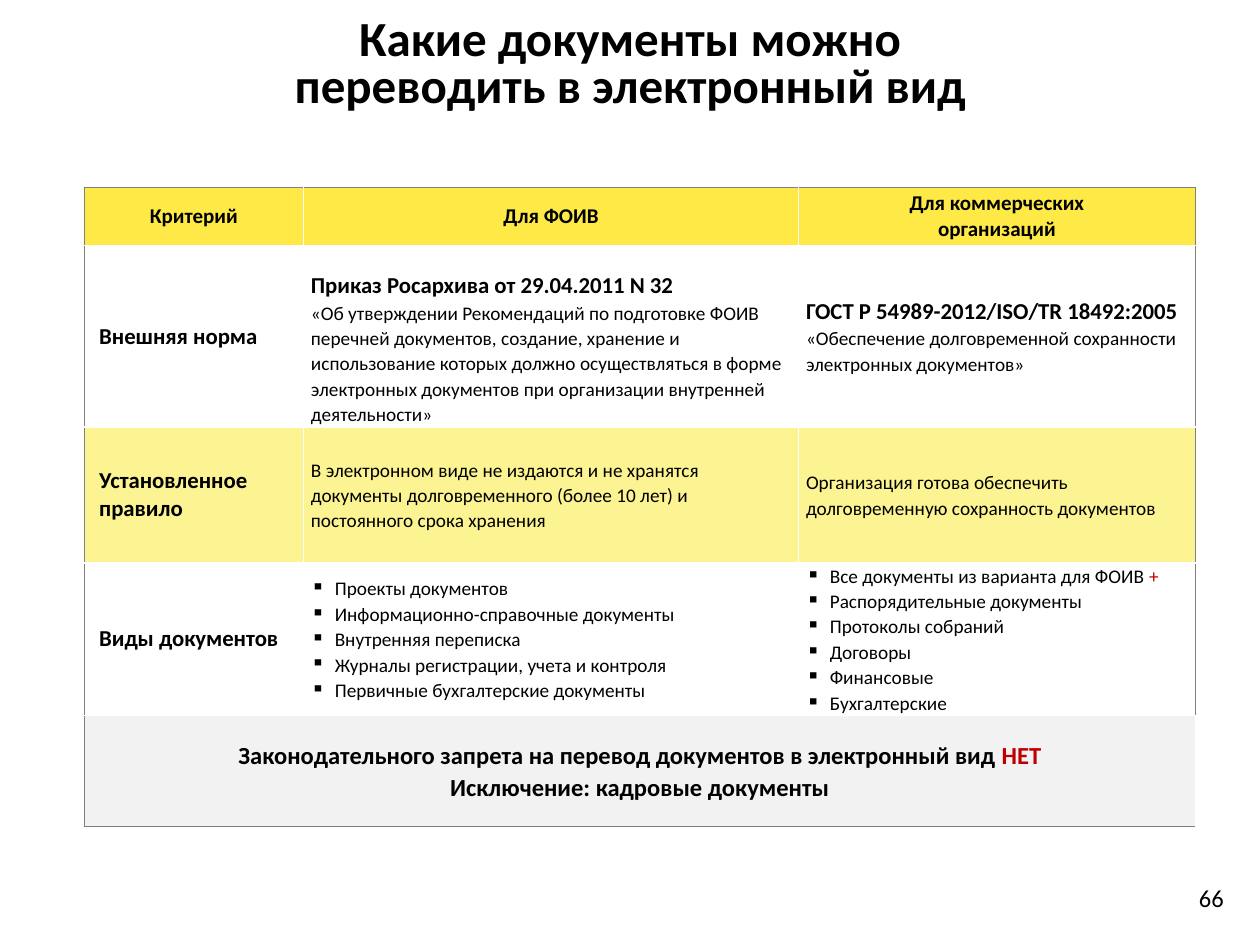
import pptx
import pptx.dml.color
import pptx.enum.text
import pptx.oxml
import pptx.oxml.ns
import pptx.util
from lxml import etree
from pptx.util import Cm

BLACK = pptx.dml.color.RGBColor(0x00, 0x00, 0x00)
WHITE = pptx.dml.color.RGBColor(0xFF, 0xFF, 0xFF)
RED = pptx.dml.color.RGBColor(0xC0, 0x00, 0x00)
GREY = pptx.dml.color.RGBColor(0x80, 0x80, 0x80)
LIGHT_GREY = pptx.dml.color.RGBColor(0xF2, 0xF2, 0xF2)
YELLOW = pptx.dml.color.RGBColor(0xFE, 0xE9, 0x47)
PALE_YELLOW = pptx.dml.color.RGBColor(0xFC, 0xF3, 0x92)

FONT = "Calibri"
LEFT = pptx.enum.text.PP_ALIGN.LEFT
CENTER = pptx.enum.text.PP_ALIGN.CENTER
RIGHT = pptx.enum.text.PP_ALIGN.RIGHT
MIDDLE = pptx.enum.text.MSO_ANCHOR.MIDDLE

COLUMN_WIDTHS = (4.42, 9.98, 8.0)
ROW_HEIGHTS = (1.17, 3.65, 2.74, 3.07, 2.24)
ROW_FILLS = (YELLOW, WHITE, PALE_YELLOW, WHITE, LIGHT_GREY)
HEADERS = ("Критерий", "Для ФОИВ", "Для коммерческих\vорганизаций")
LABELS = ("Внешняя норма", "Установленное правило", "Виды документов")
NORMS = (
    ("Приказ Росархива от 29.04.2011 N 32",
     "«Об утверждении Рекомендаций по подготовке ФОИВ перечней документов, создание, "
     "хранение и использование которых должно осуществляться в форме электронных "
     "документов при организации внутренней деятельности»"),
    ("ГОСТ Р 54989-2012/ISO/TR 18492:2005",
     "«Обеспечение долговременной сохранности электронных документов»"),
)
RULES = (
    "В электронном виде не издаются и не хранятся документы долговременного "
    "(более 10 лет) и постоянного срока хранения",
    "Организация готова обеспечить долговременную сохранность документов",
)
DOCUMENT_KINDS = (
    ("Проекты документов", "Информационно-справочные документы", "Внутренняя переписка",
     "Журналы регистрации, учета и контроля", "Первичные бухгалтерские документы"),
    ("Все документы из варианта для ФОИВ ", "Распорядительные документы",
     "Протоколы собраний", "Договоры", "Финансовые", "Бухгалтерские"),
)
CONCLUSIONS = ("Законодательного запрета на перевод документов в электронный вид ",
               "Исключение: кадровые документы")


def write(paragraph, text, size, bold=False, align=LEFT, spacing=None):
    """Fill a paragraph with text in one style."""
    paragraph.text = text
    paragraph.alignment = align
    paragraph.line_spacing = spacing
    font = paragraph.font
    font.name, font.size, font.bold = FONT, pptx.util.Pt(size), bold
    font.color.rgb = BLACK


def add_red(paragraph, text):
    """Append a red run to a paragraph."""
    run = paragraph.add_run()
    run.text = text
    run.font.color.rgb = RED


def next_paragraph(frame, index):
    """Return the first paragraph of a frame or add another one."""
    return frame.add_paragraph() if index else frame.paragraphs[0]


def indent(paragraph, left, hanging=0, bullet=None):
    """Set the left indent and an optional hanging bullet."""
    properties = paragraph._p.get_or_add_pPr()
    properties.set("marL", str(Cm(left)))
    properties.set("indent", str(-Cm(hanging)))
    if bullet:
        mark = etree.SubElement(properties, pptx.oxml.ns.qn("a:buChar"))
        mark.set("char", bullet)


def set_border(cell, side, color):
    """Draw a one-point border on one side of a cell."""
    cell._tc.get_or_add_tcPr().append(pptx.oxml.parse_xml(
        f'<a:{side} {pptx.oxml.ns.nsdecls("a")} w="12700"><a:solidFill>'
        f'<a:srgbClr val="{color}"/></a:solidFill></a:{side}>'))


def format_cell(table, row, column):
    """Set borders, fill, anchor and margins of a cell."""
    cell = table.cell(row, column)
    last_row, last_column = len(ROW_HEIGHTS) - 1, len(COLUMN_WIDTHS) - 1
    outer_sides = (("lnL", column == 0), ("lnR", column == last_column),
                   ("lnT", row == 0), ("lnB", row == last_row))
    for side, is_outer in outer_sides:
        set_border(cell, side, GREY if is_outer else WHITE)
    cell.fill.solid()
    cell.fill.fore_color.rgb = ROW_FILLS[row]
    cell.vertical_anchor = MIDDLE
    is_body = 0 < row < last_row and column > 0
    cell.margin_left = cell.margin_right = Cm(0.15 if is_body else 0.05)
    cell.margin_top = cell.margin_bottom = Cm(0 if is_body else 0.05)


def fill_body(table):
    """Write the norms, rules and document kinds of both columns."""
    for column, (norm, rule, kinds) in enumerate(zip(NORMS, RULES, DOCUMENT_KINDS), 1):
        frame = table.cell(1, column).text_frame
        write(frame.paragraphs[0], norm[0], 13, True, spacing=1.07)
        write(frame.add_paragraph(), norm[1], 11, spacing=1.07)
        write(table.cell(2, column).text_frame.paragraphs[0], rule, 11, spacing=1.07)
        frame = table.cell(3, column).text_frame
        for index, kind in enumerate(kinds):
            paragraph = next_paragraph(frame, index)
            indent(paragraph, 0.48, 0.48, "▪")
            write(paragraph, kind, 11, spacing=1.07)
    table.cell(1, 1).margin_top = Cm(0.5)
    add_red(table.cell(3, 2).text_frame.paragraphs[0], "+")


def add_criteria_table(slide, left, top, width, height):
    """Add the table of criteria with its concluding row."""
    table = slide.shapes.add_table(len(ROW_HEIGHTS), len(COLUMN_WIDTHS),
                                   left, top, width, height).table
    table.first_row = table.horz_banding = False
    for column, share in zip(table.columns, COLUMN_WIDTHS):
        column.width = int(width * share / sum(COLUMN_WIDTHS))
    for row, share in zip(table.rows, ROW_HEIGHTS):
        row.height = int(height * share / sum(ROW_HEIGHTS))
    for row in range(len(ROW_HEIGHTS)):
        for column in range(len(COLUMN_WIDTHS)):
            format_cell(table, row, column)
    for column, header in enumerate(HEADERS):
        write(table.cell(0, column).text_frame.paragraphs[0], header, 12, True, CENTER)
    for row, label in enumerate(LABELS, 1):
        paragraph = table.cell(row, 0).text_frame.paragraphs[0]
        indent(paragraph, 0.25)
        write(paragraph, label, 13, True)
    fill_body(table)
    conclusion = table.cell(4, 0)
    conclusion.merge(table.cell(4, 2))
    for index, text in enumerate(CONCLUSIONS):
        write(next_paragraph(conclusion.text_frame, index), text, 14, True, CENTER, 1.07)
    add_red(conclusion.text_frame.paragraphs[0], "НЕТ")


def place_title(slide, left, top, width, height):
    """Move and format the title placeholder."""
    title = slide.shapes.title
    title.left, title.top, title.width, title.height = left, top, width, height
    frame = title.text_frame
    frame.auto_size = pptx.enum.text.MSO_AUTO_SIZE.NONE
    frame.vertical_anchor = MIDDLE
    for index, line in enumerate(("Какие документы можно", "переводить в электронный вид")):
        write(next_paragraph(frame, index), line, 28, True, CENTER, 0.8)


def add_page_number(slide, left, top, width, height):
    """Add the page number aligned to the right."""
    frame = slide.shapes.add_textbox(left, top, width, height).text_frame
    frame.word_wrap = True
    write(frame.paragraphs[0], "66", 14, align=RIGHT)


def main():
    """Build the slide and save it."""
    presentation = pptx.Presentation()
    presentation.slide_width, presentation.slide_height = Cm(25.4), Cm(19.05)
    slide = presentation.slides.add_slide(presentation.slide_layouts[5])
    place_title(slide, Cm(0), Cm(0.05), Cm(25.4), Cm(2.54))
    add_criteria_table(slide, Cm(1.7), Cm(3.78), Cm(22.4), Cm(12.87))
    add_page_number(slide, Cm(19), Cm(17.68), Cm(5.92), Cm(1.32))
    presentation.save("out.pptx")


if __name__ == "__main__":
    main()
